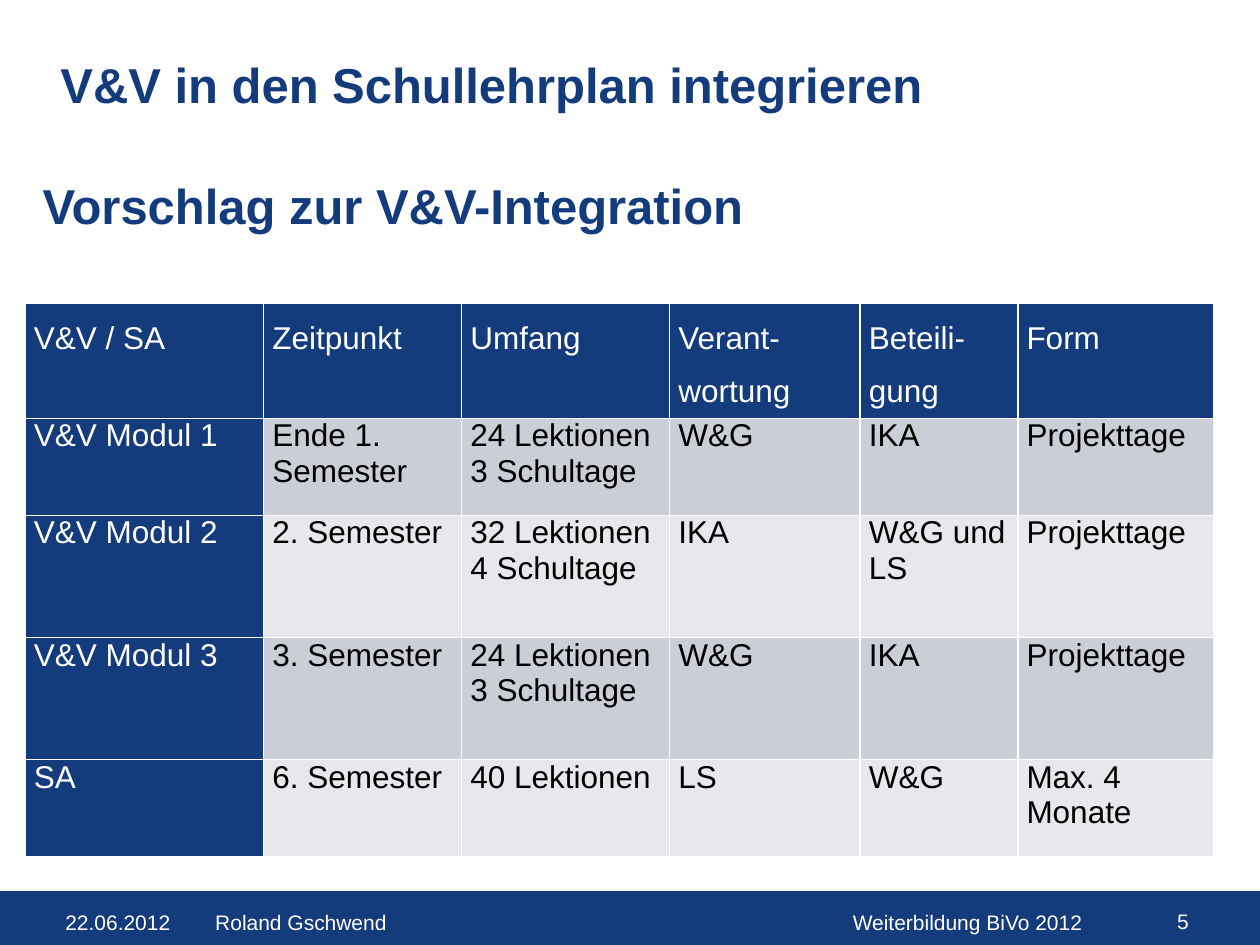
from collections import namedtuple

from lxml.etree import SubElement
from pptx import Presentation
from pptx.dml.color import RGBColor
from pptx.enum.shapes import MSO_SHAPE
from pptx.enum.text import MSO_ANCHOR, MSO_AUTO_SIZE, PP_ALIGN
from pptx.oxml.ns import qn
from pptx.util import Inches, Pt

# All boxes are measured on a grid of 100 columns by 75 rows.
COLUMNS, ROWS = 100, 75
Box = namedtuple("Box", "x y w h")

BLUE, WHITE, BLACK = "143C7D", "FFFFFF", "000000"
BANDS = ["CCCED7", "E7E8EC"]

COLUMN_WIDTHS = [18.9, 15.7, 16.5, 15.1, 12.5, 15.5]
ROW_HEIGHTS = [9.1, 7.7, 9.7, 9.7, 7.7]
PLAN = [
    ["V&V / SA", "Zeitpunkt", "Umfang", "Verant-wortung", "Beteili-gung", "Form"],
    ["V&V Modul 1", "Ende 1. Semester", "24 Lektionen\v3 Schultage", "W&G", "IKA", "Projekttage"],
    ["V&V Modul 2", "2. Semester", "32 Lektionen\v4 Schultage", "IKA", "W&G und LS", "Projekttage"],
    ["V&V Modul 3", "3. Semester", "24 Lektionen\v3 Schultage", "W&G", "IKA", "Projekttage"],
    ["SA", "6. Semester", "40 Lektionen", "LS", "W&G", "Max. 4 Monate"],
]


def rgb(value):
    return RGBColor.from_string(value)


def grid(units):
    return Inches(units * 10 / COLUMNS)


def emu(box):
    return [grid(v) for v in box]


def within(box, x, y, w, h):
    return Box(box.x + x, box.y + y, w, h)


def write(tf, text, size, color, bold=False, align=PP_ALIGN.LEFT):
    tf.text = text
    tf.word_wrap = True
    p = tf.paragraphs[0]
    p.alignment = align
    p.font.name = "Arial"
    p.font.size = Pt(size)
    p.font.bold = bold
    p.font.color.rgb = rgb(color)
    return p


def add_text(s, box, text, size, color, **style):
    tf = s.shapes.add_textbox(*emu(box)).text_frame
    write(tf, text, size, color, **style)


def add_footer(s, box):
    band = s.shapes.add_shape(MSO_SHAPE.RECTANGLE, *emu(box))
    band.shadow.inherit = False
    band.fill.solid()
    band.fill.fore_color.rgb = rgb(BLUE)
    band.line.color.rgb = rgb(BLUE)
    band.line.width = Pt(0.75)
    for text, x, y, w, align in [
        ("22.06.2012", 4.6, 0.9, 10.8, PP_ALIGN.LEFT),
        ("Roland Gschwend", 16.5, 0.9, 47.2, PP_ALIGN.LEFT),
        ("Weiterbildung BiVo 2012", 67.1, 0.9, 23.3, PP_ALIGN.LEFT),
        ("5 ", 90.4, 0.8, 5.8, PP_ALIGN.RIGHT),
    ]:
        add_text(s, within(box, x, y, w, 3.3), text, 12, WHITE, align=align)


def add_headings(s, box):
    title = s.shapes.title
    title.left, title.top, title.width, title.height = emu(within(box, 1.4, 0, 90.3, 9.3))
    tf = title.text_frame
    write(tf, "V&V in den Schullehrplan integrieren", 28, BLUE, bold=True)
    tf.auto_size = MSO_AUTO_SIZE.NONE
    tf.vertical_anchor = MSO_ANCHOR.TOP
    add_text(s, within(box, 0, 9.6, box.w, 5.7), "Vorschlag zur V&V-Integration", 28, BLUE, bold=True)


def add_borders(cell, color, width):
    tcPr = cell._tc.get_or_add_tcPr()
    for side in ("lnL", "lnR", "lnT", "lnB"):
        ln = SubElement(tcPr, qn(f"a:{side}"), w=str(Pt(width)))
        SubElement(SubElement(ln, qn("a:solidFill")), qn("a:srgbClr"), val=color)


def format_cell(cell, text, row, col):
    is_label = row == 0 or col == 0
    cell.margin_left = cell.margin_right = Inches(0.07)
    cell.margin_top = cell.margin_bottom = 0
    add_borders(cell, WHITE, 1)
    cell.fill.solid()
    cell.fill.fore_color.rgb = rgb(BLUE if is_label else BANDS[(row - 1) % 2])
    p = write(cell.text_frame, text, 18, WHITE if is_label else BLACK)
    if row == 0:
        p.alignment = PP_ALIGN.JUSTIFY
        p.line_spacing = 1.5
        p.space_before = Pt(6)


def add_plan(s, box):
    table = s.shapes.add_table(len(PLAN), len(PLAN[0]), *emu(box)).table
    for column, width in zip(table.columns, COLUMN_WIDTHS):
        column.width = grid(box.w * width / sum(COLUMN_WIDTHS))
    for row, height in zip(table.rows, ROW_HEIGHTS):
        row.height = grid(box.h * height / sum(ROW_HEIGHTS))
    for r, texts in enumerate(PLAN):
        for c, text in enumerate(texts):
            format_cell(table.cell(r, c), text, r, c)


def main():
    prs = Presentation()
    prs.slide_width, prs.slide_height = grid(COLUMNS), grid(ROWS)
    s = prs.slides.add_slide(prs.slide_layouts[5])
    add_footer(s, Box(-0.4, 70.8, 100.4, 4.2))
    add_headings(s, Box(2.4, 3.8, 93.7, 15.3))
    add_plan(s, Box(2, 24.1, 94.3, 43.9))
    prs.save("out.pptx")


if __name__ == "__main__":
    main()
